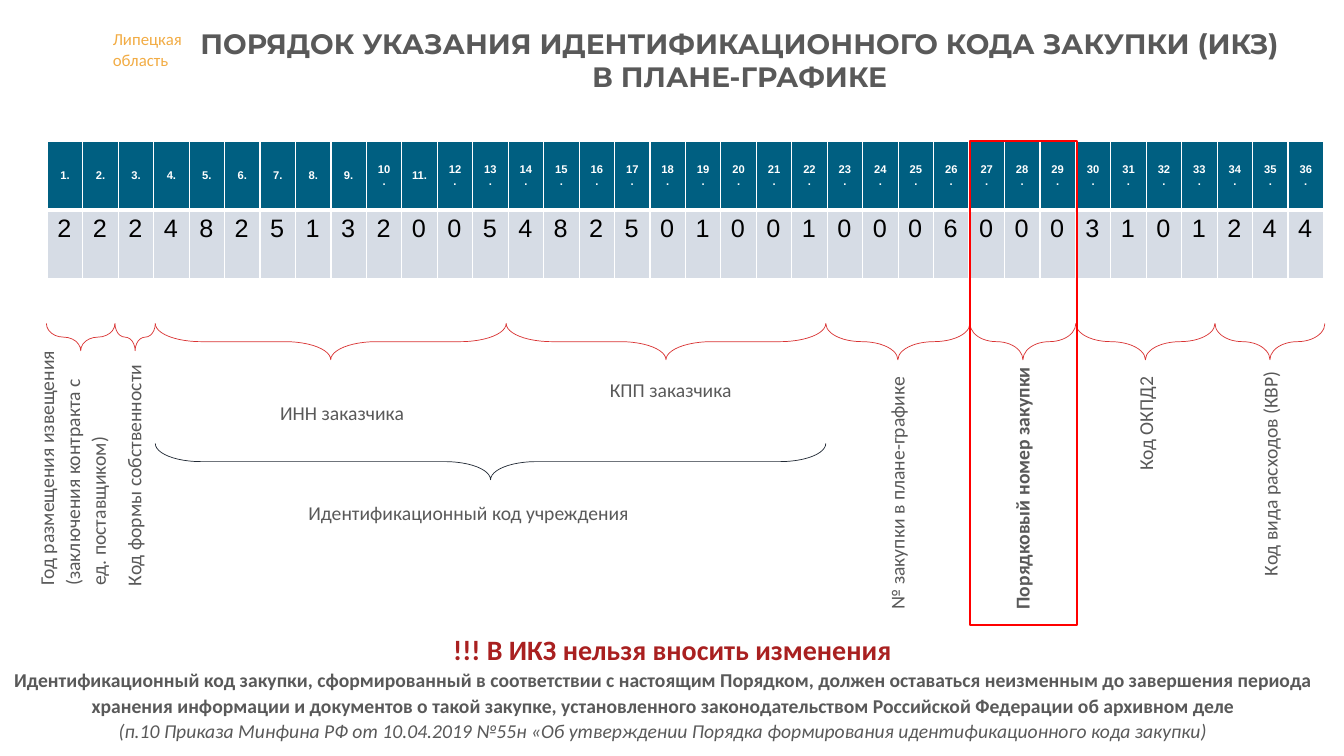
import dataclasses
import itertools
import typing

import lxml.etree
import pptx
import pptx.dml.color
import pptx.enum.shapes
import pptx.enum.text
import pptx.oxml.ns
import pptx.util

Inches = pptx.util.Inches
Pt = pptx.util.Pt
Shape = pptx.enum.shapes.MSO_SHAPE
Align = pptx.enum.text.PP_ALIGN

COLOURS = {
    "white": "FFFFFF", "black": "000000", "grey": "595959", "gold": "F2AC44",
    "teal": "005F81", "pale": "D6DCE5", "brace": "D93333", "dark": "222A35",
    "warning": "A92020", "frame": "FF0000",
}
CODE = "222482513200548250100100060003101244"
TABLE_LEFT, TABLE_TOP, TABLE_WIDTH, ROW_HEIGHT = 0.47, 1.4, 12.67, 0.68
BRACE_TOP = 3.21
GROUP_EDGES = (0.46, 1.14, 1.54, 5.02, 8.19, 9.62, 10.67, 12.05, 13.14)
SHALLOW_GROUPS = 2


@dataclasses.dataclass
class Brace:
    left: float
    right: float
    top: float
    depth: float = 0.36
    colour: str = "brace"


@dataclasses.dataclass
class Label:
    left: float
    top: float
    width: float
    height: float
    lines: tuple[str, ...]
    rotation: int = 0
    align: typing.Any = Align.LEFT
    spacing: float = 1.1
    colour: str = "grey"
    font: dict[str, typing.Any] = dataclasses.field(default_factory=dict)
    last_font: dict[str, typing.Any] = dataclasses.field(default_factory=dict)


BRACES = [
    Brace(left, right, BRACE_TOP, 0.27 if index < SHALLOW_GROUPS else 0.36)
    for index, (left, right) in enumerate(itertools.pairwise(GROUP_EDGES))
]
INSTITUTION_BRACE = Brace(GROUP_EDGES[2], GROUP_EDGES[4], 4.4, colour="dark")

HEADINGS = [
    Label(1.02, 0.24, 0.91, 0.5, ("Липецкая", "область"), spacing=1.0,
          colour="gold", font={"size": Pt(12)}),
    Label(1.63, 0.21, 11.41, 0.77,
          ("ПОРЯДОК УКАЗАНИЯ ИДЕНТИФИКАЦИОННОГО КОДА ЗАКУПКИ (ИКЗ)",
           "В ПЛАНЕ-ГРАФИКЕ"),
          align=Align.CENTER, spacing=1.0,
          font={"name": "Montserrat", "size": Pt(20), "bold": True}),
]
GROUP_LABELS = [
    Label(-0.58, 4.18, 2.58, 0.88,
          ("Год размещения извещения",
           "(заключения контракта с\vед. поставщиком)"), 270),
    Label(-0.03, 4.4, 2.68, 0.35, ("Код формы собственности",), 270),
    Label(2.68, 3.91, 1.52, 0.36, ("ИНН заказчика",)),
    Label(5.95, 3.68, 1.45, 0.36, ("КПП заказчика",)),
    Label(2.96, 4.9, 4.19, 0.36, ("Идентификационный код учреждения",)),
    Label(7.54, 4.63, 2.68, 0.35, ("№ закупки в плане-графике",), 270),
    Label(8.78, 4.63, 2.68, 0.35, ("Порядковый номер закупки",), 270,
          font={"bold": True}),
    Label(10.65, 3.89, 1.4, 0.36, ("Код ОКПД2",), 270),
    Label(11.24, 4.3, 2.68, 0.35, ("Код вида расходов (КВР)",), 270),
]
FOOTNOTES = [
    Label(0.11, 6.19, 13.12, 0.47, ("!!! В ИКЗ нельзя вносить изменения",),
          align=Align.CENTER, colour="warning",
          font={"size": Pt(20), "bold": True}),
    Label(0.02, 6.55, 13.12, 0.88,
          ("Идентификационный код закупки, сформированный в соответствии с "
           "настоящим Порядком, должен оставаться неизменным до завершения "
           "периода хранения информации и документов о такой закупке, "
           "установленного законодательством Российской Федерации об "
           "архивном деле",
           "(п.10 Приказа Минфина РФ от 10.04.2019 №55н «Об утверждении "
           "Порядка формирования идентификационного кода закупки)"),
          align=Align.CENTER, font={"bold": True},
          last_font={"bold": False, "italic": True}),
]


def rgb(colour: str) -> pptx.dml.color.RGBColor:
    return pptx.dml.color.RGBColor.from_string(COLOURS[colour])


def format_font(font: typing.Any, colour: str, values: dict[str, typing.Any]) -> None:
    for name, value in values.items():
        setattr(font, name, value)
    font.color.rgb = rgb(colour)


def draw_label(page: typing.Any, label: Label) -> None:
    box = page.shapes.add_textbox(Inches(label.left), Inches(label.top),
                                  Inches(label.width), Inches(label.height))
    box.rotation = label.rotation
    frame = box.text_frame
    frame.word_wrap = True
    frame.auto_size = pptx.enum.text.MSO_AUTO_SIZE.SHAPE_TO_FIT_TEXT
    for index, line in enumerate(label.lines):
        para = frame.add_paragraph() if index else frame.paragraphs[0]
        para.text = line
        para.alignment = label.align
        para.line_spacing = label.spacing
        values = {"name": "Calibri", "size": Pt(14)} | label.font
        if index == len(label.lines) - 1:
            values |= label.last_font
        for span in para.runs:
            format_font(span.font, label.colour, values)


def draw_outline(page: typing.Any, preset: typing.Any, left: float, top: float,
                 width: float, height: float, colour: str, weight: float) -> typing.Any:
    shape = page.shapes.add_shape(preset, Inches(left), Inches(top),
                                  Inches(width), Inches(height))
    shape.shadow.inherit = False
    shape.fill.background()
    shape.line.color.rgb = rgb(colour)
    shape.line.width = Pt(weight)
    return shape


def draw_brace(page: typing.Any, brace: Brace) -> None:
    """Turn an upright right brace so that its tip points down."""
    length = brace.right - brace.left
    left = (brace.left + brace.right - brace.depth) / 2
    top = brace.top + (brace.depth - length) / 2
    shape = draw_outline(page, Shape.RIGHT_BRACE, left, top, brace.depth, length,
                         brace.colour, 0.5)
    shape.rotation = 90
    shape.adjustments[0] = 1.26


def set_borders(cell: typing.Any, bottom: float) -> None:
    properties = cell._tc.get_or_add_tcPr()
    qn = pptx.oxml.ns.qn
    for side, weight in {"L": 1, "R": 1, "T": 1, "B": bottom}.items():
        line = lxml.etree.SubElement(properties, qn(f"a:ln{side}"), w=str(Pt(weight)))
        fill = lxml.etree.SubElement(line, qn("a:solidFill"))
        lxml.etree.SubElement(fill, qn("a:srgbClr"), val=COLOURS["white"])


def fill_cell(cell: typing.Any, text: str, fill: str, colour: str, bottom: float,
              values: dict[str, typing.Any]) -> None:
    set_borders(cell, bottom)
    cell.fill.solid()
    cell.fill.fore_color.rgb = rgb(fill)
    cell.text = text
    format_font(cell.text_frame.paragraphs[0].runs[0].font, colour,
                {"name": "Arial"} | values)


def draw_code_table(page: typing.Any) -> None:
    table = page.shapes.add_table(2, len(CODE), Inches(TABLE_LEFT), Inches(TABLE_TOP),
                                  Inches(TABLE_WIDTH), Inches(2 * ROW_HEIGHT)).table
    for column, digit in enumerate(CODE):
        header = table.cell(0, column)
        fill_cell(header, f"{column + 1}.", "teal", "white", 3,
                  {"size": Pt(8), "bold": True})
        header.vertical_anchor = pptx.enum.text.MSO_ANCHOR.MIDDLE
        header.text_frame.paragraphs[0].alignment = Align.CENTER
        fill_cell(table.cell(1, column), digit, "pale", "black", 1,
                  {"size": Pt(18), "bold": False})


def main() -> None:
    deck = pptx.Presentation()
    deck.slide_width, deck.slide_height = Inches(13.33), Inches(7.5)
    page = deck.slides.add_slide(deck.slide_layouts[6])
    for heading in HEADINGS:
        draw_label(page, heading)
    draw_code_table(page)
    for brace in BRACES:
        draw_brace(page, brace)
    for label in GROUP_LABELS + FOOTNOTES:
        draw_label(page, label)
    draw_outline(page, Shape.RECTANGLE, 9.62, TABLE_TOP, 1.06, 4.8, "frame", 1.5)
    draw_brace(page, INSTITUTION_BRACE)
    deck.save("out.pptx")


if __name__ == "__main__":
    main()
